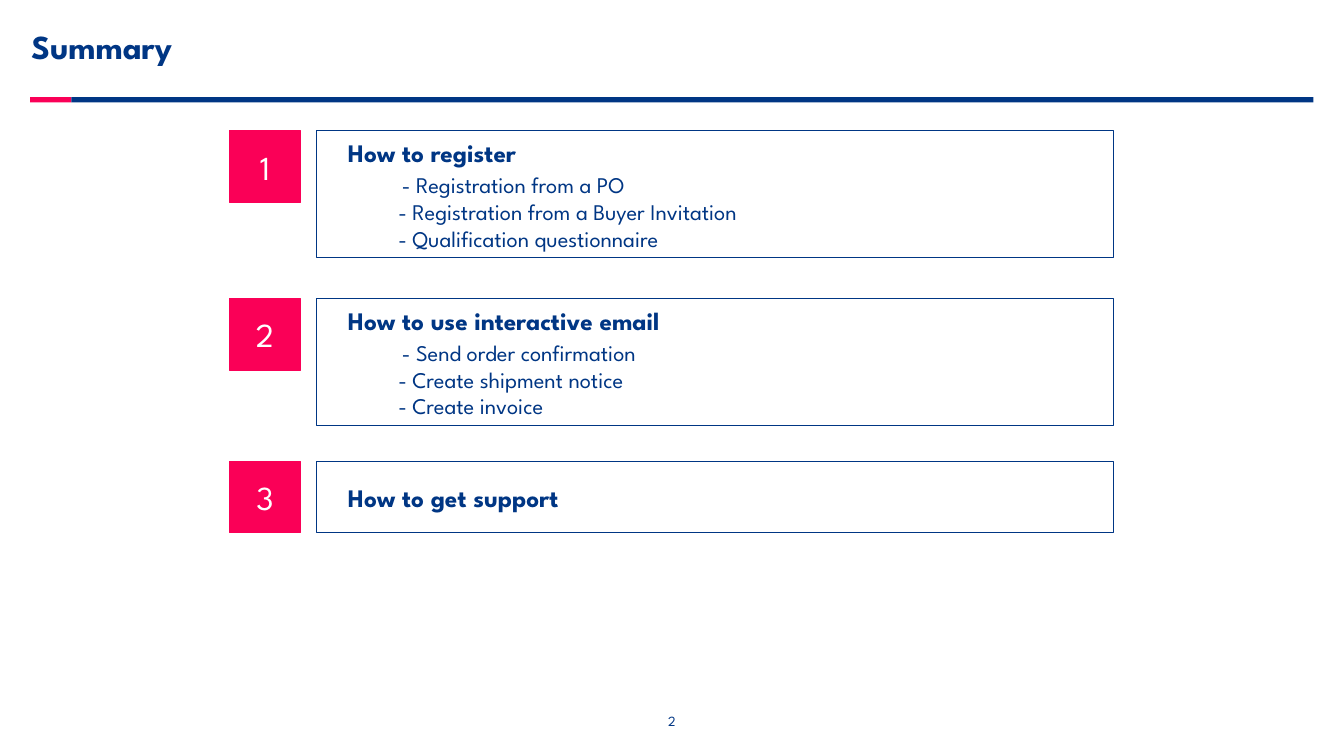
from pptx import Presentation
from pptx import util as u
from pptx.dml.color import RGBColor
from pptx.enum import shapes, text

COLORS = {"navy": "003684", "pink": "FA0057", "white": "FFFFFF"}

# top and height of the box in cm, heading, steps
TOPICS = [
    (3.3, 3.2, "How to register",
     ["Registration from a PO", "Registration from a Buyer Invitation",
      "Qualification questionnaire"]),
    (7.53, 3.2, "How to use interactive email",
     ["Send order confirmation", "Create shipment notice", "Create invoice"]),
    (11.63, 1.8, "How to get support", []),
]


class SummarySlide:
    font_name = "League Spartan"

    def __init__(self, slide):
        self.slide = slide

    def color(self, name):
        return RGBColor.from_string(COLORS[name])

    def rectangle(self, left, top, width, height, fill, line=None):
        rect = self.slide.shapes.add_shape(
            shapes.MSO_SHAPE.RECTANGLE,
            u.Cm(left), u.Cm(top), u.Cm(width), u.Cm(height))
        rect.shadow.inherit = False
        rect.fill.solid()
        rect.fill.fore_color.rgb = self.color(fill)
        if line:
            rect.line.color.rgb = self.color(line)
            rect.line.width = u.Pt(0.75)
        else:
            rect.line.fill.background()
        return rect

    def frame(self, shape, sides, ends):
        """Centre the text vertically and set its insets in cm."""
        frame = shape.text_frame
        frame.word_wrap = True
        frame.vertical_anchor = text.MSO_ANCHOR.MIDDLE
        frame.margin_left, frame.margin_right = map(u.Cm, sides)
        frame.margin_top = frame.margin_bottom = u.Cm(ends)
        return frame

    def set_text(self, paragraph, words, size, color="navy", bold=False,
                 align=text.PP_ALIGN.LEFT):
        paragraph.text = words
        paragraph.alignment = align
        font = paragraph.font
        font.name, font.size, font.bold = self.font_name, u.Pt(size), bold
        font.color.rgb = self.color(color)

    def label(self, left, top, width, height, words, size, **style):
        box = self.slide.shapes.add_textbox(
            u.Cm(left), u.Cm(top), u.Cm(width), u.Cm(height))
        paragraph = self.frame(box, (0, 0), 0.1).paragraphs[0]
        self.set_text(paragraph, words, size, **style)
        return paragraph

    def badge(self, top, number):
        square = self.rectangle(5.79, top, 1.78, 1.8, "pink", "pink")
        self.set_text(self.frame(square, (0.25, 0.25), 0.2).paragraphs[0],
                      str(number), 24, "white", align=text.PP_ALIGN.CENTER)

    def topic(self, top, height, heading, steps):
        box = self.rectangle(7.98, top, 20.09, height, "white", "navy")
        frame = self.frame(box, (0.79, 0.25), 0.2)
        self.set_text(frame.paragraphs[0], heading, 18, bold=True)
        for index, step in enumerate(steps):
            paragraph = frame.add_paragraph()
            indent = 1.27 if index else 1.36
            paragraph._p.get_or_add_pPr().set("marL", str(u.Cm(indent)))
            if index == 0:
                paragraph.space_before = u.Pt(2.4)
            self.set_text(paragraph, f"- {step}", 16)


def main():
    deck = Presentation()
    deck.slide_width, deck.slide_height = u.Cm(33.87), u.Cm(19.05)
    summary = SummarySlide(deck.slides.add_slide(deck.slide_layouts[6]))

    summary.rectangle(0.76, 2.45, 1.04, 0.13, "pink")
    summary.rectangle(1.8, 2.45, 31.3, 0.13, "navy")
    title = summary.label(0.79, 0, 32.3, 2.45, "Summary", 24, bold=True)
    title.line_spacing = 0.9
    summary.label(16.48, 17.86, 0.91, 0.63, "2", 10,
                  align=text.PP_ALIGN.CENTER)

    for number, (top, height, heading, steps) in enumerate(TOPICS, 1):
        summary.topic(top, height, heading, steps)
        summary.badge(top, number)

    deck.save("out.pptx")


if __name__ == "__main__":
    main()
